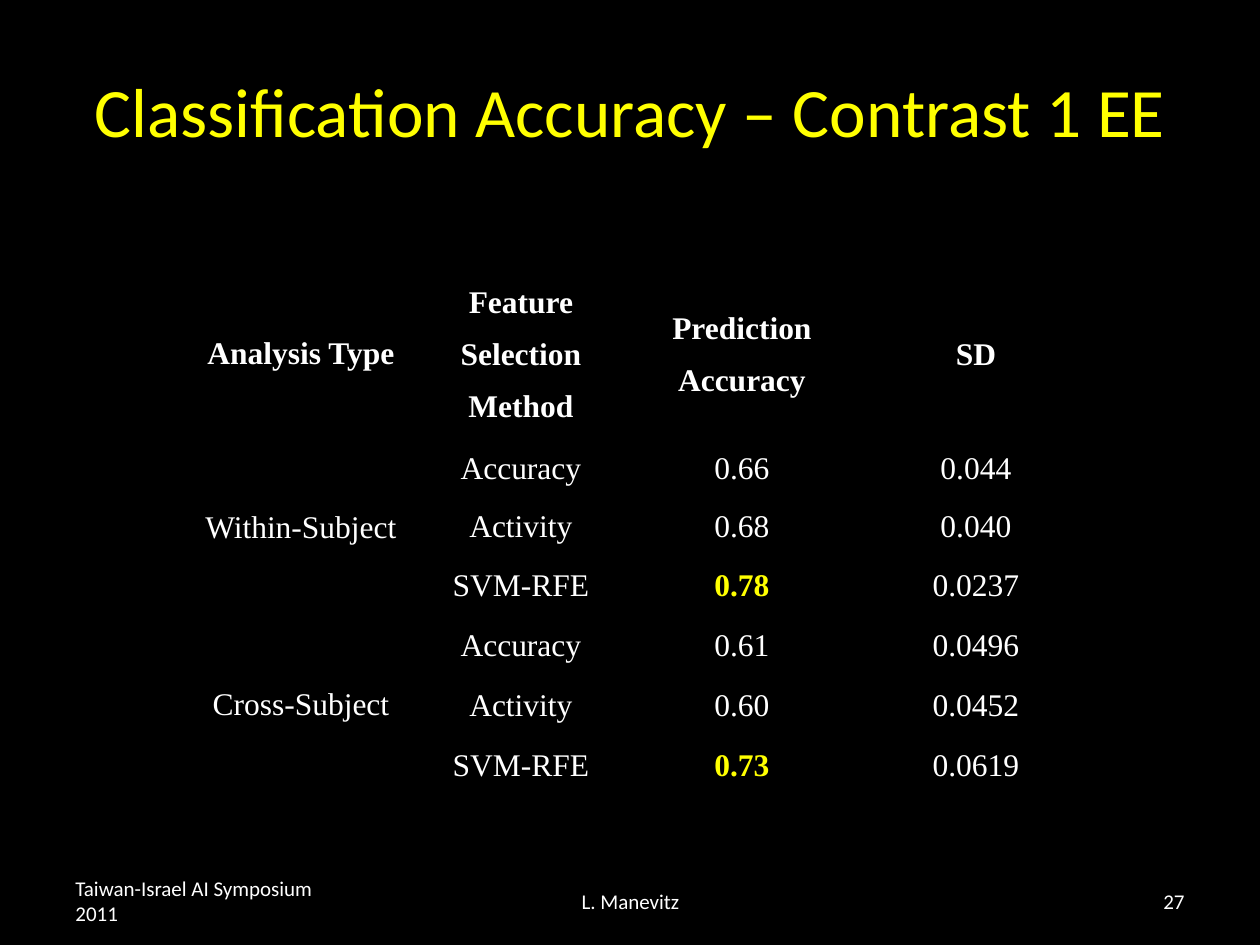
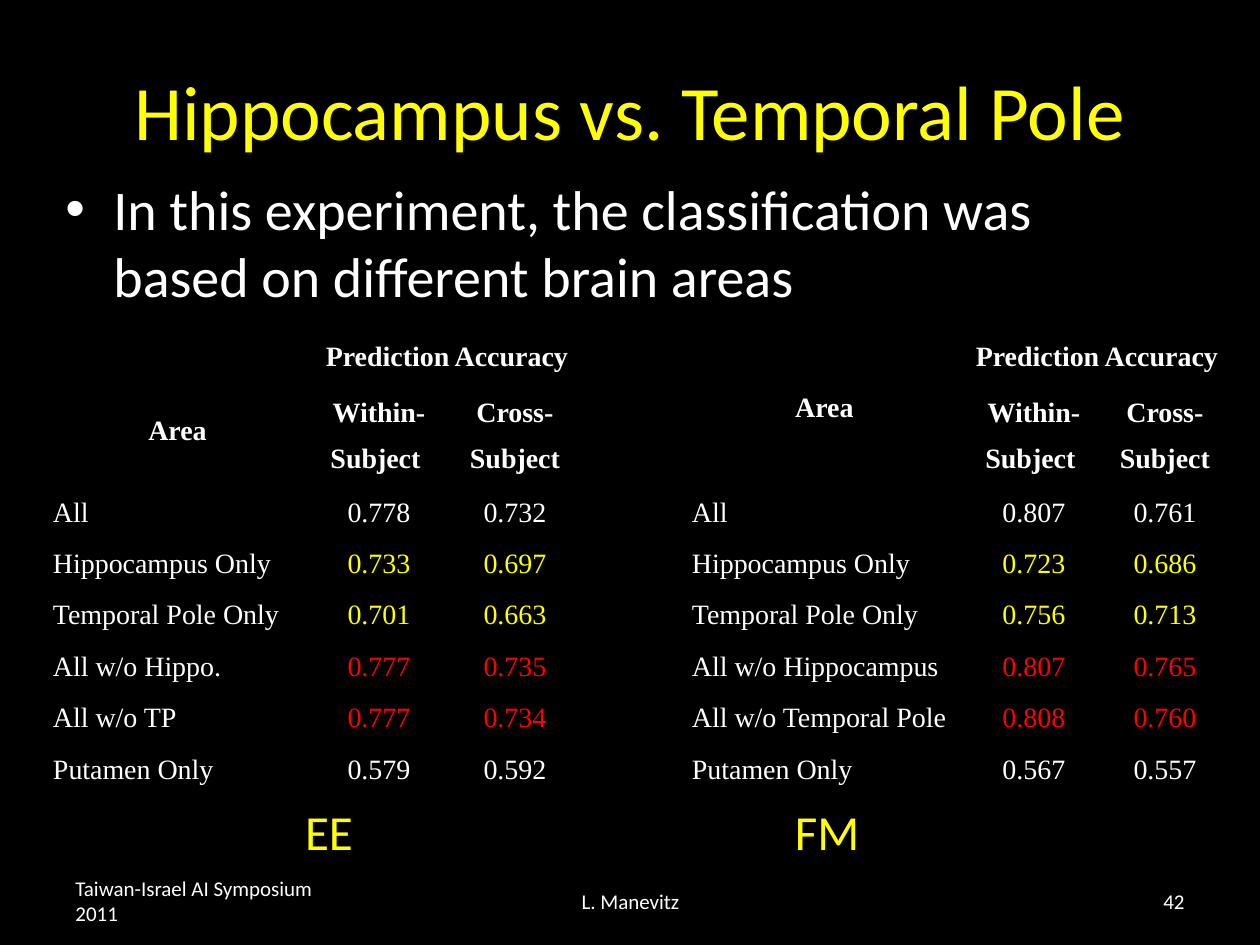
from dataclasses import dataclass
from pptx import Presentation
from pptx.dml.color import RGBColor
from pptx.enum.text import MSO_ANCHOR as Anchor, PP_ALIGN as Align
from pptx.oxml import parse_xml
from pptx.oxml.ns import nsdecls
from pptx.util import Pt

BLACK, WHITE, YELLOW, RED = "000000", "FFFFFF", "FFFF00", "FF0000"
SANS, SERIF = "Calibri", "Times New Roman"
EMU_PER_PX = 914400 / 126

TITLE_BOX = (63, 42, 1134, 136)
FOOTER_TOP, FOOTER_HEIGHT = 876, 50
EVENT, SPEAKER = "Taiwan-Israel AI Symposium 2011", "L. Manevitz"


@dataclass
class Cell:
    text: str
    color: str = WHITE
    bold: bool = False
    align: Align = Align.CENTER
    inset: tuple = (9, 1, 9, 0)


def header(text, **options):
    return Cell(text, bold=True, **options)


FLUSH = (0, 0, 0, 0)
CONTRAST_HEADERS = ("Feature Selection Method", "Prediction Accuracy", "SD")
CONTRAST_RESULTS = {
    "Within-Subject": [
        ("Accuracy", "0.66", "0.044"),
        ("Activity", "0.68", "0.040"),
        ("SVM-RFE", "0.78", "0.0237"),
    ],
    "Cross-Subject": [
        ("Accuracy", "0.61", "0.0496"),
        ("Activity", "0.60", "0.0452"),
        ("SVM-RFE", "0.73", "0.0619"),
    ],
}
BEST_ACCURACIES = ("0.78", "0.73")

BODY = "In this experiment, the classification was based on different brain areas"
AREA_COLORS = (WHITE, YELLOW, YELLOW, RED, RED, WHITE)
AREA_TABLES = [
    dict(
        name="EE", name_center=329, left=44, area_drop=47,
        columns=(267, 136, 136), heights=(57, 67, 39, 39, 39, 39, 39, 44),
        results=[
            ("All", "0.778", "0.732"),
            ("Hippocampus Only", "0.733", "0.697"),
            ("Temporal Pole Only", "0.701", "0.663"),
            ("All w/o Hippo.", "0.777", "0.735"),
            ("All w/o TP", "0.777", "0.734"),
            ("Putamen Only", "0.579", "0.592"),
        ],
    ),
    dict(
        name="FM", name_center=827, left=683, area_drop=1,
        columns=(283, 136, 126), heights=(57, 67, 40, 39, 39, 39, 39, 39),
        results=[
            ("All", "0.807", "0.761"),
            ("Hippocampus Only", "0.723", "0.686"),
            ("Temporal Pole Only", "0.756", "0.713"),
            ("All w/o Hippocampus", "0.807", "0.765"),
            ("All w/o Temporal Pole", "0.808", "0.760"),
            ("Putamen Only", "0.567", "0.557"),
        ],
    ),
]


def px(length):
    return round(length * EMU_PER_PX)


def rgb(color):
    return RGBColor.from_string(color)


def set_font(paragraph, size, color, name=SANS, bold=False):
    font = paragraph.font
    font.size, font.name, font.bold = Pt(size), name, bold
    font.color.rgb = rgb(color)


def add_text(slide, box, text, size, color=WHITE, align=Align.LEFT, anchor=Anchor.MIDDLE):
    frame = slide.shapes.add_textbox(*map(px, box)).text_frame
    frame.word_wrap = True
    frame.vertical_anchor = anchor
    paragraph = frame.paragraphs[0]
    paragraph.text = text
    paragraph.alignment = align
    set_font(paragraph, size, color)
    return paragraph


def add_bullet(paragraph, indent):
    properties = paragraph._p.get_or_add_pPr()
    properties.set("marL", str(px(indent)))
    properties.set("indent", str(-px(indent)))
    properties.append(parse_xml(f'<a:buFont {nsdecls("a")} typeface="Arial"/>'))
    properties.append(parse_xml(f'<a:buChar {nsdecls("a")} char="•"/>'))


def add_borders(table_cell):
    properties = table_cell._tc.get_or_add_tcPr()
    for side in ("lnL", "lnR", "lnT", "lnB"):
        properties.append(parse_xml(
            f'<a:{side} {nsdecls("a")} w="{Pt(1)}"><a:solidFill>'
            f'<a:srgbClr val="{BLACK}"/></a:solidFill></a:{side}>'))


def fill_cell(table_cell, cell, size):
    add_borders(table_cell)
    table_cell.fill.solid()
    table_cell.fill.fore_color.rgb = rgb(BLACK)
    table_cell.vertical_anchor = Anchor.MIDDLE
    left, top, right, bottom = map(px, cell.inset)
    table_cell.margin_left, table_cell.margin_right = left, right
    table_cell.margin_top, table_cell.margin_bottom = top, bottom
    paragraph = table_cell.text_frame.paragraphs[0]
    paragraph.text = cell.text
    paragraph.alignment = cell.align
    paragraph.line_spacing = 1.5
    paragraph.space_after = Pt(10)
    set_font(paragraph, size, cell.color, SERIF, cell.bold)


def add_table(slide, left, top, columns, heights, rows, size, merges):
    box = map(px, (left, top, sum(columns), sum(heights)))
    table = slide.shapes.add_table(len(heights), len(columns), *box).table
    table.first_row = table.horz_banding = False
    for column, width in zip(table.columns, columns):
        column.width = px(width)
    for row, height in zip(table.rows, heights):
        row.height = px(height)
    for row_index, row in enumerate(rows):
        for column_index, cell in enumerate(row):
            fill_cell(table.cell(row_index, column_index), cell, size)
    for first, last in merges:
        table.cell(*first).merge(table.cell(*last))


def add_slide(presentation, title, title_size, number):
    slide = presentation.slides.add_slide(presentation.slide_layouts[6])
    slide.background.fill.solid()
    slide.background.fill.fore_color.rgb = rgb(BLACK)
    add_text(slide, TITLE_BOX, title, title_size, YELLOW, Align.CENTER)
    for text, left, width, align in (
        (EVENT, 63, 294, Align.LEFT),
        (SPEAKER, 431, 399, Align.CENTER),
        (str(number), 903, 294, Align.RIGHT),
    ):
        add_text(slide, (left, FOOTER_TOP, width, FOOTER_HEIGHT), text, 12, align=align)
    return slide


def add_contrast_table(slide):
    rows = [[header("Analysis Type", inset=FLUSH), *map(header, CONTRAST_HEADERS)]]
    merges = []
    for analysis, results in CONTRAST_RESULTS.items():
        merges.append(((len(rows), 0), (len(rows) + len(results) - 1, 0)))
        for index, (method, accuracy, deviation) in enumerate(results):
            best = accuracy in BEST_ACCURACIES
            rows.append([
                Cell(analysis if index == 0 else "", inset=FLUSH),
                Cell(method),
                Cell(accuracy, YELLOW if best else WHITE, best),
                Cell(deviation),
            ])
    heights = (111, 57, 57, 60, 60, 60, 60)
    add_table(slide, 185, 260, (232, 208, 234, 234), heights, rows, 18, merges)


def add_area_table(slide, area):
    rows = [
        [header("Area", inset=(9, area["area_drop"], 9, 0)),
         header("Prediction Accuracy"), header("")],
        [header(""), header("Within-Subject "), header("Cross-Subject")],
    ]
    for (label, within, cross), color in zip(area["results"], AREA_COLORS):
        rows.append([Cell(label, align=Align.LEFT), Cell(within, color), Cell(cross, color)])
    merges = [((0, 0), (1, 0)), ((0, 1), (0, 2))]
    add_table(slide, area["left"], 320, area["columns"], area["heights"], rows, 16, merges)
    name_box = (area["name_center"] - 60, 796, 120, 70)
    add_text(slide, name_box, area["name"], 28, YELLOW, Align.CENTER)


def main():
    presentation = Presentation()
    presentation.slide_width, presentation.slide_height = px(1260), px(945)

    contrast = add_slide(presentation, "Classification Accuracy – Contrast 1 EE", 39.6, 27)
    add_contrast_table(contrast)

    areas = add_slide(presentation, "Hippocampus vs. Temporal Pole", 44, 42)
    add_bullet(add_text(areas, (53, 168, 1134, 150), BODY, 32, anchor=Anchor.TOP), 48)
    for area in AREA_TABLES:
        add_area_table(areas, area)

    presentation.save("out.pptx")


if __name__ == "__main__":
    main()
